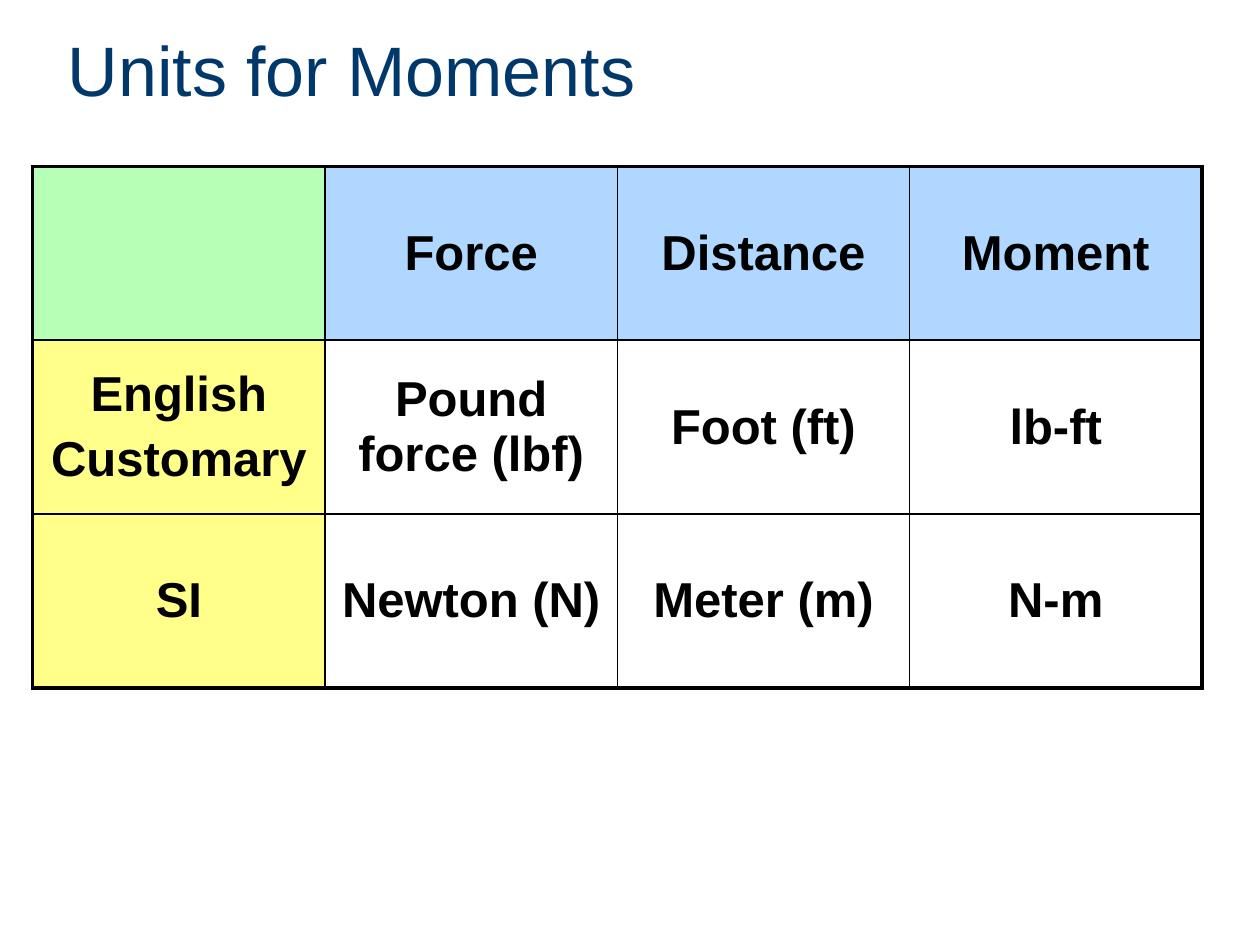
from lxml.etree import SubElement
from pptx import Presentation
from pptx.dml.color import RGBColor
from pptx.enum.text import MSO_ANCHOR as Anchor, PP_ALIGN as Align
from pptx.oxml.ns import qn
from pptx.util import Inches, Pt

NAVY = RGBColor(0x00, 0x38, 0x6B)
BLACK = RGBColor(0, 0, 0)
GREEN = RGBColor(0xB7, 0xFF, 0xB7)
BLUE = RGBColor(0xAF, 0xD7, 0xFF)
YELLOW = RGBColor(0xFF, 0xFF, 0x89)

TITLE = "Units for Moments"
UNITS = [
    ["", "Force", "Distance", "Moment"],
    ["English\nCustomary", "Pound force (lbf)", "Foot (ft)", "lb-ft"],
    ["SI", "Newton (N)", "Meter (m)", "N-m"],
]
ROWS, COLS = len(UNITS), len(UNITS[0])
COL_W, ROW_H = 2.32, 1.38
THIN, THICK = Pt(1), Pt(2.25)
TITLE_FONT = {"name": "Arial", "size": Pt(40)}
CELL_FONT = {"name": "Arial", "size": Pt(28), "bold": True}


def set_font(font, values, color):
    for key, value in values.items():
        setattr(font, key, value)
    font.color.rgb = color


def add_title(slide):
    box = slide.shapes.add_textbox(Inches(0.44), 0, Inches(9.3), Inches(1.09))
    tf = box.text_frame
    tf.word_wrap = True
    tf.vertical_anchor = Anchor.MIDDLE
    tf.text = TITLE
    set_font(tf.paragraphs[0].runs[0].font, TITLE_FONT, NAVY)


def set_borders(cell, row, col):
    outer = {"L": col == 0, "R": col == COLS - 1,
             "T": row == 0, "B": row == ROWS - 1}
    tcPr = cell._tc.get_or_add_tcPr()
    for side, is_outer in outer.items():
        ln = SubElement(tcPr, qn(f"a:ln{side}"), w=str(THICK if is_outer else THIN))
        fill = SubElement(ln, qn("a:solidFill"))
        SubElement(fill, qn("a:srgbClr"), val=str(BLACK))


def set_fill(cell, row, col):
    if row and col:
        cell.fill.background()
        return
    cell.fill.solid()
    cell.fill.fore_color.rgb = BLUE if col else YELLOW if row else GREEN


def set_text(cell, text):
    cell.vertical_anchor = Anchor.MIDDLE
    cell.text = text
    for p in cell.text_frame.paragraphs:
        p.alignment = Align.CENTER
        p.space_before = Pt(5.6)
        set_font(p.font, CELL_FONT, BLACK)
        for r in p.runs:
            set_font(r.font, CELL_FONT, BLACK)


def add_units_table(slide):
    table = slide.shapes.add_table(
        ROWS, COLS, Inches(0.26), Inches(1.32),
        Inches(COLS * COL_W), Inches(ROWS * ROW_H)).table
    table.first_row = table.horz_banding = False
    for column in table.columns:
        column.width = Inches(COL_W)
    for row, texts in enumerate(UNITS):
        table.rows[row].height = Inches(ROW_H)
        for col, text in enumerate(texts):
            cell = table.cell(row, col)
            set_borders(cell, row, col)
            set_fill(cell, row, col)
            set_text(cell, text)


def main():
    prs = Presentation()
    prs.slide_width, prs.slide_height = Inches(10), Inches(7.5)
    slide = prs.slides.add_slide(prs.slide_layouts[6])
    add_title(slide)
    add_units_table(slide)
    prs.save("out.pptx")


if __name__ == "__main__":
    main()
